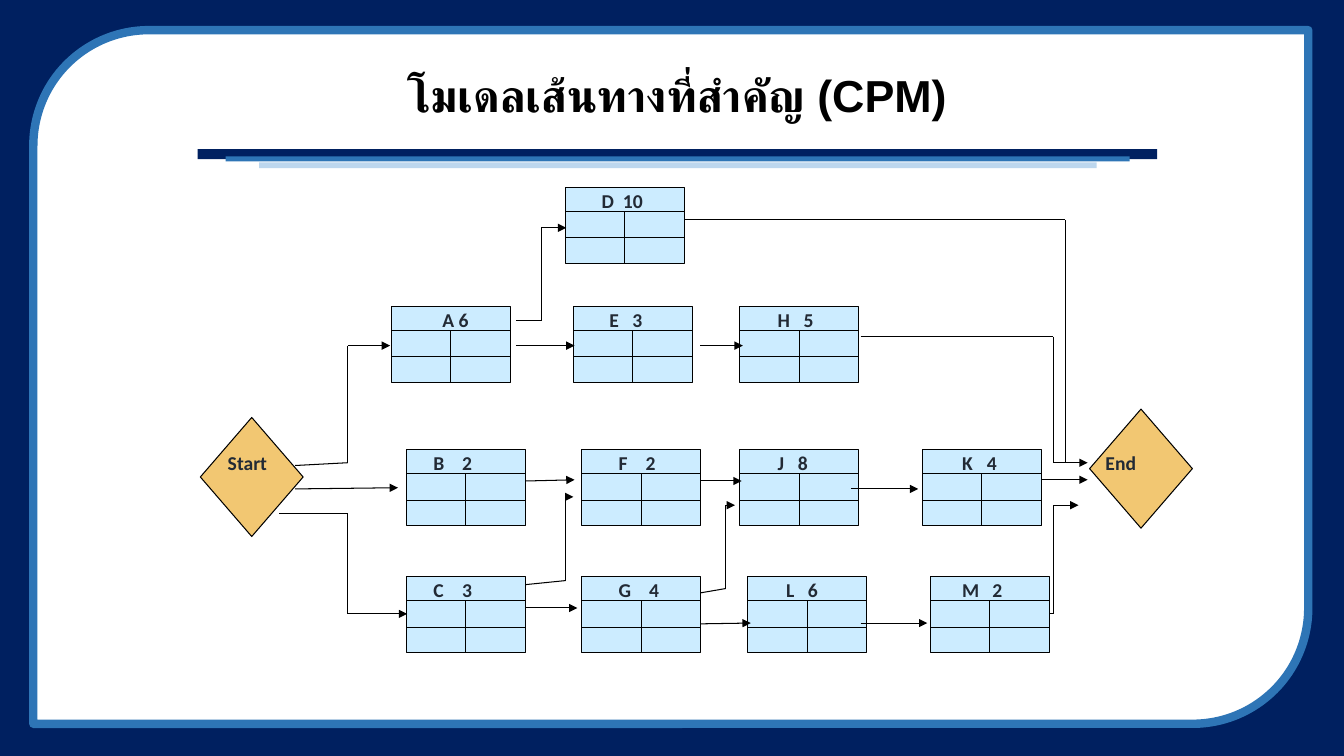
from dataclasses import dataclass
from itertools import pairwise

import lxml.etree
import pptx
import pptx.dml.color
import pptx.enum.shapes
import pptx.enum.text
import pptx.oxml.ns
import pptx.util

Cm = pptx.util.Cm
Shape = pptx.enum.shapes.MSO_SHAPE
Align = pptx.enum.text.PP_ALIGN
qn = pptx.oxml.ns.qn

COLORS = {
    "navy": "002060", "blue": "2E75B6", "pale": "BDD7EE", "white": "FFFFFF",
    "black": "000000", "cell": "CCECFF", "gold": "F2C772", "label": "222A35",
}
CELL_WIDTH, CELL_HEIGHT = 3.0, 1.91
HEADER_HEIGHT, MIDDLE_HEIGHT = 0.6, 1.27
ROW_TOPS = {1: 4.72, 2: 7.72, 3: 11.33, 4: 14.53}


@dataclass(frozen=True)
class Panel:
    left: float
    top: float
    width: float
    height: float
    fill: str
    kind: int = Shape.RECTANGLE
    line: str | None = None
    line_width: float = 0.75


@dataclass(frozen=True)
class Activity:
    label: str
    left: float
    row: int
    indent: float
    tab: float = 0


@dataclass(frozen=True)
class Milestone:
    label: str
    left: float
    top: float
    label_left: float
    label_width: float


@dataclass(frozen=True)
class Route:
    points: tuple[tuple[float, float], ...]
    arrow: bool = True


BACKDROP = [
    Panel(0, 0, 33.87, 19.05, "navy"),
    Panel(0.84, 0.76, 32.13, 17.48, "white", Shape.ROUND_2_DIAG_RECTANGLE, "blue", 6),
    Panel(4.98, 3.76, 24.18, 0.25, "navy"),
    Panel(5.69, 3.94, 22.78, 0.13, "blue"),
    Panel(6.53, 4.09, 21.11, 0.15, "pale"),
]
MILESTONES = [
    Milestone("Start", 5.05, 10.52, 5.49, 1.9),
    Milestone("End", 27.46, 10.31, 27.61, 1.55),
]
ACTIVITIES = [
    Activity("A 6", 9.86, 2, 1.04),
    Activity("B\t2", 10.24, 3, 0.43, 0.73),
    Activity("C\t3", 10.24, 4, 0.43, 0.73),
    Activity("D\t10", 14.25, 1, 0.66, 0.54),
    Activity("E\t3", 14.45, 2, 0.66, 0.58),
    Activity("F\t2", 14.66, 3, 0.68, 0.68),
    Activity("G\t4", 14.66, 4, 0.68, 0.77),
    Activity("H\t5", 18.64, 2, 0.71, 0.65),
    Activity("J\t8", 18.64, 3, 0.71, 0.51),
    Activity("L\t6", 18.85, 4, 0.71, 0.55),
    Activity("K\t4", 23.24, 3, 0.76, 0.62),
    Activity("M\t2", 23.44, 4, 0.56, 0.76),
]
ROUTES = [
    Route(((7.44, 11.73), (8.76, 11.66), (8.76, 8.71), (9.83, 8.71))),
    Route(((7.44, 12.32), (10.03, 12.29))),
    Route(((7.04, 12.93), (8.76, 12.93), (8.76, 15.47), (10.26, 15.47))),
    Route(((13.0, 8.08), (13.64, 8.08), (13.64, 5.74), (14.27, 5.74))),
    Route(((13.0, 8.71), (14.48, 8.71))),
    Route(((13.26, 12.12), (14.48, 12.09))),
    Route(((13.26, 14.73), (14.25, 14.63), (14.25, 12.52), (14.45, 12.52))),
    Route(((13.26, 15.32), (14.55, 15.32))),
    Route(((17.65, 8.71), (18.72, 8.71))),
    Route(((17.65, 12.12), (18.69, 12.12))),
    Route(((17.65, 14.94), (18.29, 14.83), (18.29, 12.73), (18.52, 12.73))),
    Route(((17.65, 15.72), (18.92, 15.7))),
    Route(((21.44, 12.32), (23.14, 12.32))),
    Route(((21.69, 15.7), (23.37, 15.7))),
    Route(((26.24, 12.09), (27.41, 12.09))),
    Route(((26.44, 15.47), (26.54, 15.47), (26.54, 12.73), (27.18, 12.73))),
    Route(((21.69, 8.48), (26.54, 8.48), (26.54, 11.66), (27.41, 11.66))),
    Route(((17.25, 5.54), (26.85, 5.54), (26.85, 11.66)), arrow=False),
]


def rgb(name: str) -> pptx.dml.color.RGBColor:
    return pptx.dml.color.RGBColor.from_string(COLORS[name])


def draw_panel(slide, panel: Panel) -> None:
    shape = slide.shapes.add_shape(
        panel.kind, Cm(panel.left), Cm(panel.top), Cm(panel.width), Cm(panel.height))
    shape.shadow.inherit = False
    shape.fill.solid()
    shape.fill.fore_color.rgb = rgb(panel.fill)
    if panel.line:
        shape.line.color.rgb = rgb(panel.line)
        shape.line.width = pptx.util.Pt(panel.line_width)
    else:
        shape.line.fill.background()


def draw_line(slide, start: tuple[float, float], end: tuple[float, float],
              arrow: bool = False) -> None:
    connector = slide.shapes.add_connector(
        pptx.enum.shapes.MSO_CONNECTOR.STRAIGHT, *map(Cm, start + end))
    connector.line.color.rgb = rgb("black")
    connector.line.width = pptx.util.Pt(0.75)
    if arrow:
        outline = connector.line._get_or_add_ln()
        lxml.etree.SubElement(outline, qn("a:tailEnd"), type="triangle")
    lxml.etree.SubElement(connector._element.spPr, qn("a:effectLst"))


def write_text(slide, text: str, left: float, top: float, width: float, height: float,
               *, size: float = 14, font: str = "Calibri", color: str = "label",
               align: int = Align.LEFT, anchor: int = pptx.enum.text.MSO_ANCHOR.TOP,
               wrap: bool = True, spacing: float = 1.0, tab: float = 0) -> None:
    frame = slide.shapes.add_textbox(Cm(left), Cm(top), Cm(width), Cm(height)).text_frame
    frame.word_wrap = wrap
    frame.vertical_anchor = anchor
    paragraph = frame.paragraphs[0]
    paragraph.alignment = align
    paragraph.line_spacing = spacing
    if tab:
        stops = lxml.etree.SubElement(paragraph._p.get_or_add_pPr(), qn("a:tabLst"))
        lxml.etree.SubElement(stops, qn("a:tab"), pos=str(Cm(tab)), algn="l")
    run = paragraph.add_run()
    run.text = text
    run.font.size = pptx.util.Pt(size)
    run.font.name = font
    run.font.bold = True
    run.font.color.rgb = rgb(color)


def draw_activity(slide, activity: Activity) -> None:
    left, top = activity.left, ROW_TOPS[activity.row]
    right, center = left + CELL_WIDTH, left + CELL_WIDTH / 2
    draw_panel(slide, Panel(left, top, CELL_WIDTH, CELL_HEIGHT, "cell", line="black"))
    for offset in (HEADER_HEIGHT, MIDDLE_HEIGHT):
        draw_line(slide, (left, top + offset), (right, top + offset))
    draw_line(slide, (center, top + HEADER_HEIGHT), (center, top + CELL_HEIGHT))
    write_text(slide, activity.label, left + activity.indent, top - 0.08, 2.11, 0.84,
               tab=activity.tab)


def draw_milestone(slide, milestone: Milestone) -> None:
    draw_panel(slide, Panel(milestone.left, milestone.top, 2.59, 3.0, "gold",
                            Shape.DIAMOND, "black"))
    write_text(slide, milestone.label, milestone.label_left, 11.25,
               milestone.label_width, 0.86, wrap=False)


def draw_route(slide, route: Route) -> None:
    segments = list(pairwise(route.points))
    for number, (start, end) in enumerate(segments, 1):
        draw_line(slide, start, end, route.arrow and number == len(segments))


def main() -> None:
    """Build the critical path model slide."""
    deck = pptx.Presentation()
    deck.slide_width, deck.slide_height = Cm(33.87), Cm(19.05)
    slide = deck.slides.add_slide(deck.slide_layouts[6])
    for panel in BACKDROP:
        draw_panel(slide, panel)
    write_text(slide, "โมเดลเส้นทางที่สำคัญ (CPM)", 4.98, 1.24, 24.18, 2.46,
               size=32, font="Arial", color="black", align=Align.CENTER,
               anchor=pptx.enum.text.MSO_ANCHOR.MIDDLE, spacing=0.9)
    for milestone in MILESTONES:
        draw_milestone(slide, milestone)
    for activity in ACTIVITIES:
        draw_activity(slide, activity)
    for route in ROUTES:
        draw_route(slide, route)
    deck.save("out.pptx")


if __name__ == "__main__":
    main()
